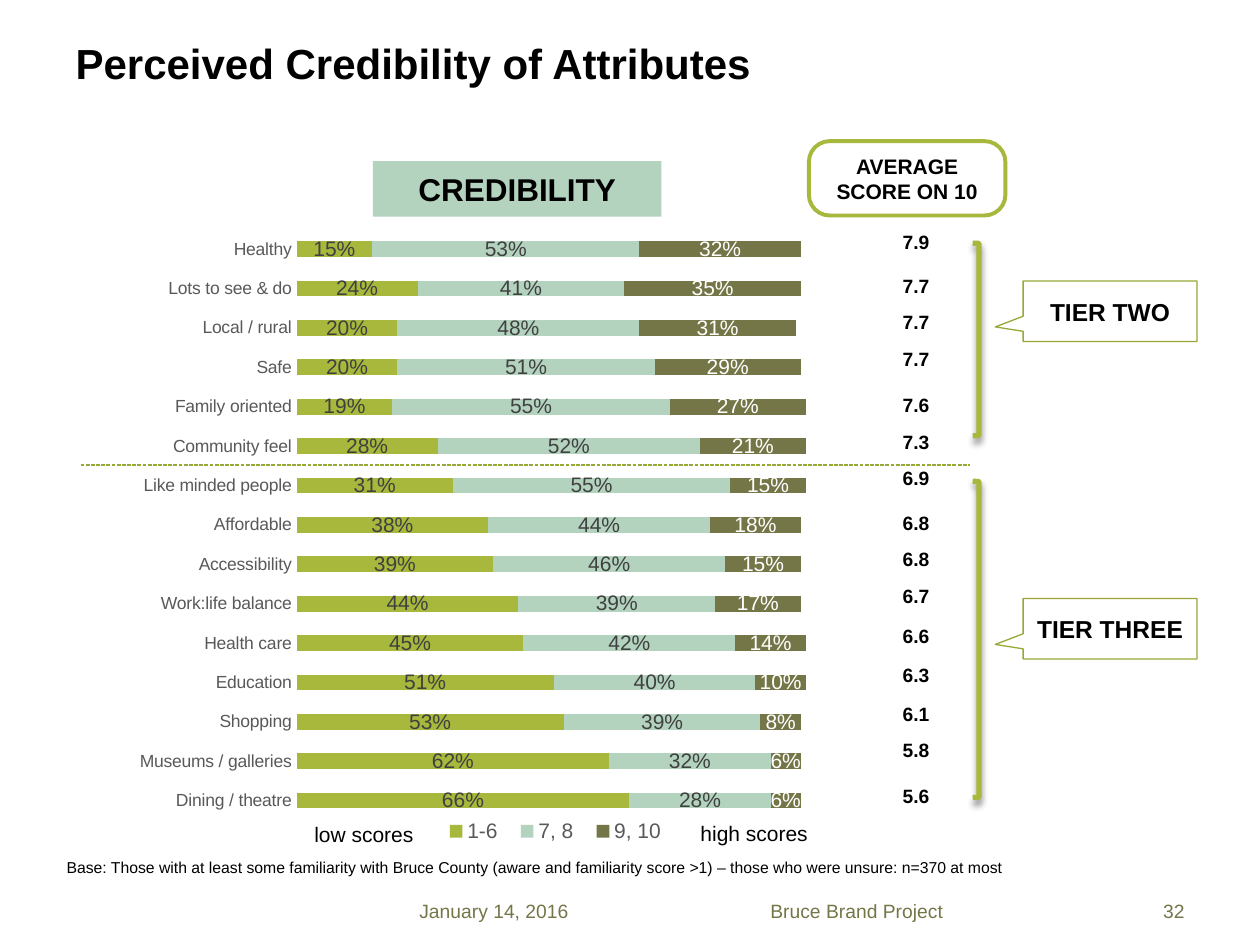
from lxml import etree
from pptx import Presentation
from pptx.chart import data as chart_data
from pptx.dml.color import RGBColor
from pptx.enum import chart as chart_enum, dml, shapes, text
from pptx.oxml import ns, parse_xml
from pptx.util import Inches, Pt

THEME = {
    "font": "Arial",
    "black": "000000", "white": "FFFFFF", "olive": "757648", "lime": "A7B83C",
    "dark_lime": "98A736", "sage": "B3D3BF", "grey": "595959", "dark_grey": "404040",
    "title": 24, "heading": 18, "tier": 14, "label": 12, "small": 11, "axis": 10, "note": 9,
}
LEFT, CENTER, RIGHT = text.PP_ALIGN.LEFT, text.PP_ALIGN.CENTER, text.PP_ALIGN.RIGHT
TOP, MIDDLE = text.MSO_ANCHOR.TOP, text.MSO_ANCHOR.MIDDLE

# Content: attribute, shares scoring 1-6 / 7, 8 / 9, 10, average, table row height
ATTRIBUTES = [
    ("Healthy", 0.15, 0.53, 0.32, "7.9", 0.35),
    ("Lots to see & do", 0.24, 0.41, 0.35, "7.7", 0.29),
    ("Local / rural", 0.20, 0.48, 0.31, "7.7", 0.29),
    ("Safe", 0.20, 0.51, 0.29, "7.7", 0.37),
    ("Family oriented", 0.19, 0.55, 0.27, "7.6", 0.29),
    ("Community feel", 0.28, 0.52, 0.21, "7.3", 0.29),
    ("Like minded people", 0.31, 0.55, 0.15, "6.9", 0.35),
    ("Affordable", 0.38, 0.44, 0.18, "6.8", 0.29),
    ("Accessibility", 0.39, 0.46, 0.15, "6.8", 0.29),
    ("Work:life balance", 0.44, 0.39, 0.17, "6.7", 0.32),
    ("Health care", 0.45, 0.42, 0.14, "6.6", 0.31),
    ("Education", 0.51, 0.40, 0.10, "6.3", 0.31),
    ("Shopping", 0.53, 0.39, 0.08, "6.1", 0.29),
    ("Museums / galleries", 0.62, 0.32, 0.06, "5.8", 0.36),
    ("Dining / theatre", 0.66, 0.28, 0.06, "5.6", 0.29),
]
SERIES = [  # name, fill, label colour
    ("1-6", "lime", "dark_grey"), ("7, 8", "sage", "dark_grey"), ("9, 10", "olive", "white"),
]
CAPTIONS = [  # text, box, format
    ("January 14, 2016", (3.23, 7.09, 1.75, 0.28), dict(size="small", color="olive", anchor=MIDDLE)),
    ("Bruce Brand Project", (4.99, 7.09, 3.62, 0.28),
     dict(size="small", color="olive", align=CENTER, anchor=MIDDLE)),
    ("32", (8.62, 7.09, 0.88, 0.28), dict(size="small", color="olive", align=RIGHT, anchor=MIDDLE)),
    ("Base: Those with at least some familiarity with Bruce County (aware and familiarity "
     "score >1) – those who were unsure: n=370 at most", (0.43, 6.76, 9.2, 0.25), dict(size="note")),
    ("low scores", (2.07, 6.47, 1.31, 0.3), dict(align=RIGHT)),
    ("high scores", (5.2, 6.46, 1.31, 0.3), dict(align=RIGHT)),
]
TIERS = [  # text, callout top, bracket top, bracket height
    ("TIER TWO", 2.23, 1.93, 1.53), ("TIER THREE", 4.75, 3.82, 2.51),
]


def rgb(name):
    return RGBColor.from_string(THEME[name])


def format_font(font, size, color, bold=False):
    font.name, font.size, font.bold = THEME["font"], Pt(THEME[size]), bold
    font.color.rgb = rgb(color)


def write(frame, content, size="label", color="black", bold=False, align=LEFT, anchor=TOP):
    frame.word_wrap = True
    frame.vertical_anchor = anchor
    paragraph = frame.paragraphs[0]
    paragraph.text = content
    paragraph.alignment = align
    format_font(paragraph.font, size, color, bold)


def add_shape(slide, kind, box, fill=None, line=None, width=0.75):
    shape = slide.shapes.add_shape(kind, *map(Inches, box))
    shape.shadow.inherit = False
    if fill:
        shape.fill.solid()
        shape.fill.fore_color.rgb = rgb(fill)
    else:
        shape.fill.background()
    if line:
        shape.line.color.rgb = rgb(line)
        shape.line.width = Pt(width)
    else:
        shape.line.fill.background()
    return shape


def add_shadow(shape):
    effects = shape._element.spPr.find(ns.qn("a:effectLst"))
    effects.append(parse_xml(
        f'<a:outerShdw {ns.nsdecls("a")} blurRad="{Pt(4)}" dist="{Pt(3)}" dir="5400000" '
        'rotWithShape="0"><a:srgbClr val="000000"><a:alpha val="43000"/></a:srgbClr></a:outerShdw>'))


def layout_xml(x, y, width, height, inner=False):
    target = '<c:layoutTarget val="inner"/>' if inner else ""
    return parse_xml(
        f'<c:layout {ns.nsdecls("c")}><c:manualLayout>{target}<c:xMode val="edge"/>'
        f'<c:yMode val="edge"/><c:x val="{x}"/><c:y val="{y}"/><c:w val="{width}"/>'
        f'<c:h val="{height}"/></c:manualLayout></c:layout>')


def set_layout(element, layout, index):
    for previous in element.findall(ns.qn("c:layout")):
        element.remove(previous)
    element.insert(index, layout)


def add_credibility_chart(slide):
    rows = ATTRIBUTES[::-1]  # bars are drawn from the bottom up
    data = chart_data.CategoryChartData(number_format="0%")
    data.categories = [row[0] for row in rows]
    for column, (name, _, _) in enumerate(SERIES, start=1):
        data.add_series(name, [row[column] for row in rows])
    chart = slide.shapes.add_chart(chart_enum.XL_CHART_TYPE.BAR_STACKED,
                                   *map(Inches, (0.64, 1.67, 6.67, 5.08)), data).chart
    chart.has_title = False
    format_font(chart.font, "axis", "black")

    # Axes
    category_axis, value_axis = chart.category_axis, chart.value_axis
    category_axis.major_tick_mark = chart_enum.XL_TICK_MARK.NONE
    category_axis.format.line.fill.background()
    format_font(category_axis.tick_labels.font, "axis", "grey")
    value_axis.minimum_scale, value_axis.maximum_scale = 0, 1.2
    value_axis.has_major_gridlines = False
    value_axis.visible = False

    # Bars and labels
    plot = chart.plots[0]
    plot.gap_width, plot.overlap, plot.vary_by_categories = 150, 100, False
    for series, (_, fill, label_color) in zip(plot.series, SERIES):
        series.format.fill.solid()
        series.format.fill.fore_color.rgb = rgb(fill)
        labels = series.data_labels
        labels.show_value = True
        labels.number_format, labels.number_format_is_linked = "0%", False
        labels.position = chart_enum.XL_LABEL_POSITION.CENTER
        format_font(labels.font, "label", label_color)

    # Legend and plot position
    chart.has_legend = True
    legend = chart.legend
    legend.position = chart_enum.XL_LEGEND_POSITION.BOTTOM
    legend.include_in_layout = False
    format_font(legend.font, "label", "grey")
    set_layout(legend._element, layout_xml(0.42, 0.94, 0.29, 0.07), 1)
    plot_area = chart._chartSpace.chart.plotArea
    set_layout(plot_area, layout_xml(0.257, 0.03, 0.72, 0.923, inner=True), 0)


def add_average_table(slide):
    heights = [row[5] for row in ATTRIBUTES]
    table = slide.shapes.add_table(len(heights), 1, Inches(6.57), Inches(1.79),
                                   Inches(1.4), Inches(sum(heights))).table
    table.first_row = table.horz_banding = False
    for index, (*_, average, height) in enumerate(ATTRIBUTES):
        table.rows[index].height = Inches(height)
        cell = table.cell(index, 0)
        cell.fill.background()
        write(cell.text_frame, average, size="small", bold=True, align=CENTER)
        properties = cell._tc.get_or_add_tcPr()
        for position, side in enumerate(("lnL", "lnR", "lnT", "lnB")):
            border = parse_xml(f'<a:{side} {ns.nsdecls("a")} w="0"><a:noFill/></a:{side}>')
            properties.insert(position, border)


def main():
    presentation = Presentation()
    presentation.slide_width, presentation.slide_height = Inches(10), Inches(7.5)
    slide = presentation.slides.add_slide(presentation.slide_layouts[5])

    # Title and captions
    title = slide.shapes.title
    title.left, title.top, title.width, title.height = map(Inches, (0.5, 0.24, 6.67, 0.52))
    write(title.text_frame, "Perceived Credibility of Attributes", size="title", bold=True, anchor=MIDDLE)
    for content, box, style in CAPTIONS:
        write(slide.shapes.add_textbox(*map(Inches, box)).text_frame, content, **style)

    # Headings
    heading = add_shape(slide, shapes.MSO_SHAPE.RECTANGLE, (2.96, 1.28, 2.29, 0.44), fill="sage")
    write(heading.text_frame, "CREDIBILITY", size="heading", bold=True, align=CENTER, anchor=MIDDLE)
    score = add_shape(slide, shapes.MSO_SHAPE.ROUNDED_RECTANGLE, (6.42, 1.12, 1.56, 0.59),
                      line="lime", width=2.25)
    score.adjustments[0] = 0.28
    write(score.text_frame, "AVERAGE SCORE ON 10", bold=True, align=CENTER, anchor=MIDDLE)

    add_average_table(slide)
    add_credibility_chart(slide)

    # Divider between tiers
    divider = slide.shapes.add_connector(shapes.MSO_CONNECTOR.STRAIGHT,
                                         *map(Inches, (0.64, 3.69, 7.7, 3.69)))
    divider.line.color.rgb = rgb("dark_lime")
    divider.line.width = Pt(0.75)
    divider.line.dash_style = dml.MSO_LINE.SQUARE_DOT
    etree.SubElement(divider._element.spPr, ns.qn("a:effectLst"))

    # Tier brackets and callouts
    for label, callout_top, bracket_top, bracket_height in TIERS:
        bracket = add_shape(slide, shapes.MSO_SHAPE.RIGHT_BRACKET,
                            (7.72, bracket_top, 0.05, bracket_height), line="lime", width=3)
        add_shadow(bracket)
        callout = add_shape(slide, shapes.MSO_SHAPE.RECTANGULAR_CALLOUT,
                            (8.12, callout_top, 1.38, 0.48), line="dark_lime")
        callout.adjustments[0], callout.adjustments[1] = -0.66, 0.26
        write(callout.text_frame, label, size="tier", bold=True, align=CENTER, anchor=MIDDLE)

    presentation.save("out.pptx")


if __name__ == "__main__":
    main()
